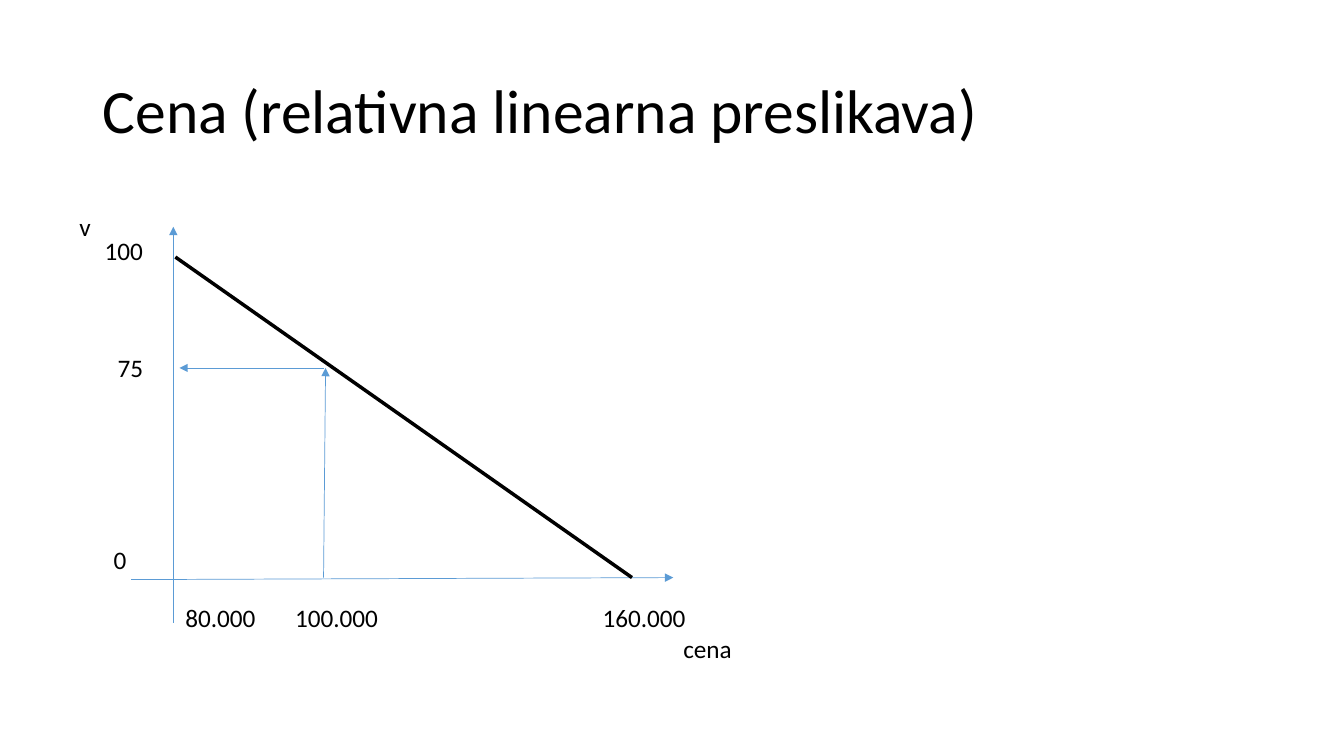
"""Builds a slide with a falling linear price-to-value mapping."""
from lxml import etree
from pptx import Presentation
from pptx import util as u
from pptx.dml import color
from pptx.enum import shapes, text
from pptx.oxml import ns

BLACK, BLUE = "000000", "5B9BD5"
TITLE = "Cena (relativna linearna preslikava)"
TITLE_BOX = (66.24, 28.8, 828, 104.4)
LABEL_H = 29.08
TICK_Y = 426.96
AXIS_X, AXIS_Y = 123.84, 412.56
PRICE_X, VALUE_Y = 231.12, 262.8

LABELS = [
    ("cena", 480.96, 448.56, 49.68),
    ("v", 49.68, 147.6, 23.04),
    ("0", 74.16, 385.2, 23.76),
    ("100", 67.68, 164.88, 42.48),
    ("75", 77.04, 248.4, 33.12),
    ("80.000", 125.28, TICK_Y, 64.8),
    ("100.000", 203.76, TICK_Y, 74.16),
    ("160.000", 423.36, TICK_Y, 74.16),
]
ARROWS = [
    (AXIS_X, 444.96, AXIS_X, 162),
    (93.6, 414, 480.96, AXIS_Y),
    (PRICE_X, AXIS_Y, 232.56, VALUE_Y),
    (PRICE_X, VALUE_Y, 128.16, VALUE_Y),
]
MAPPING = (125.28, 183.6, 451.44, AXIS_Y)


def rgb(value):
    return color.RGBColor.from_string(value)


def add_text(s, content, box, size=18, wrap=False, anchor=text.MSO_ANCHOR.TOP, spacing=1.0):
    tf = s.shapes.add_textbox(*map(u.Pt, box)).text_frame
    tf.word_wrap = wrap
    tf.vertical_anchor = anchor
    p = tf.paragraphs[0]
    p.line_spacing = spacing
    r = p.add_run()
    r.text = content
    r.font.name = "Calibri"
    r.font.size = u.Pt(size)
    r.font.color.rgb = rgb(BLACK)


def add_line(s, ends, hue, width, arrow=False):
    sp = s.shapes.add_connector(shapes.MSO_CONNECTOR.STRAIGHT, *map(u.Pt, ends))
    sp.line.color.rgb = rgb(hue)
    sp.line.width = u.Pt(width)
    if arrow:
        etree.SubElement(sp.line._get_or_add_ln(), ns.qn("a:tailEnd"), type="triangle")
    etree.SubElement(sp._element.spPr, ns.qn("a:effectLst"))


def main():
    prs = Presentation()
    prs.slide_width, prs.slide_height = u.Pt(960), u.Pt(540)
    s = prs.slides.add_slide(prs.slide_layouts[6])
    add_text(s, TITLE, TITLE_BOX, size=44, wrap=True, anchor=text.MSO_ANCHOR.MIDDLE, spacing=0.9)
    for ends in ARROWS:
        add_line(s, ends, BLUE, 0.5, arrow=True)
    add_line(s, MAPPING, BLACK, 2.5)
    for content, x, y, width in LABELS:
        add_text(s, content, (x, y, width, LABEL_H))
    prs.save("out.pptx")


if __name__ == "__main__":
    main()
